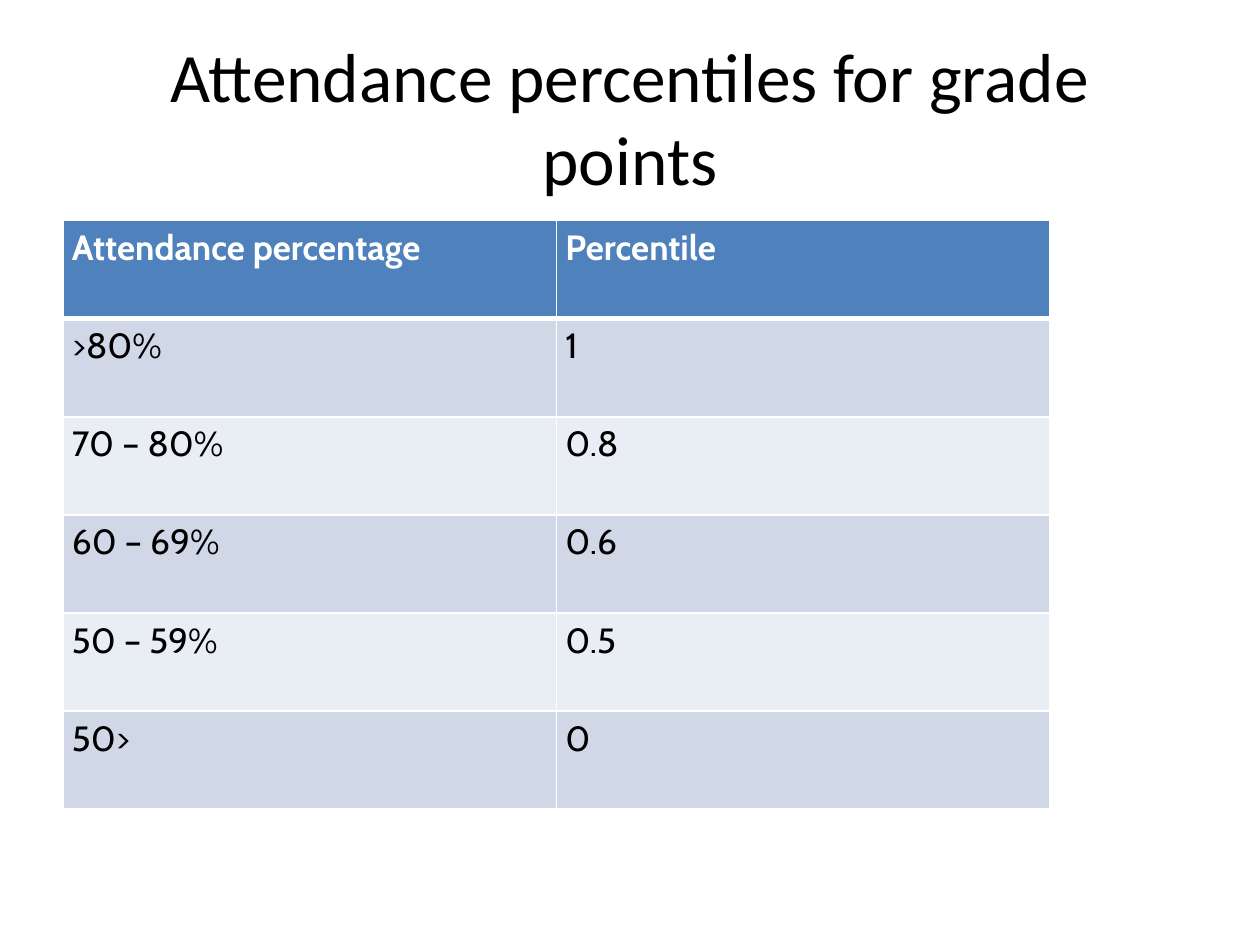
from dataclasses import dataclass

from lxml import etree
from pptx import Presentation
from pptx import util as u
from pptx.dml import color
from pptx.enum import text
from pptx.oxml import ns


@dataclass(frozen=True)
class Theme:
    """Colours, fonts and type sizes of the slide."""
    ink: str = "000000"
    paper: str = "FFFFFF"
    header: str = "4F81BD"
    bands: tuple = ("D0D8E8", "E9EDF4")
    title_font: str = "Calibri"
    table_font: str = "Cabin"
    title_size: float = 39.6
    table_size: float = 20


THEME = Theme()
TITLE = "Attendance percentiles for grade points"
GRADES = [
    ("Attendance percentage", "Percentile"),
    (">80%", "1"),
    ("70 – 80%", "0.8"),
    ("60 – 69%", "0.6"),
    ("50 – 59%", "0.5"),
    ("50>", "0"),
]


def style_text(p, font, size, rgb, bold=False):
    """Format every run of a paragraph."""
    for r in p.runs:
        r.font.name = font
        r.font.size = u.Pt(size)
        r.font.bold = bold
        r.font.color.rgb = color.RGBColor.from_string(rgb)


def set_title(s):
    """Place and format the title placeholder."""
    sp = s.shapes.title
    sp.left, sp.top, sp.width, sp.height = u.Cm(1.27), u.Cm(0.76), u.Cm(22.86), u.Cm(3.18)
    tf = sp.text_frame
    tf.text = TITLE
    tf.word_wrap = True
    tf.auto_size = text.MSO_AUTO_SIZE.NONE
    tf.vertical_anchor = text.MSO_ANCHOR.MIDDLE
    p = tf.paragraphs[0]
    p.alignment = text.PP_ALIGN.CENTER
    style_text(p, THEME.title_font, THEME.title_size, THEME.ink)


def set_borders(cell, top, bottom):
    """Draw the four cell borders, with top and bottom widths in points."""
    tc_pr = cell._tc.get_or_add_tcPr()
    for side, width in (("L", 1), ("R", 1), ("T", top), ("B", bottom)):
        ln = etree.SubElement(tc_pr, ns.qn(f"a:ln{side}"), w=str(u.Pt(width)))
        fill = etree.SubElement(ln, ns.qn("a:solidFill"))
        etree.SubElement(fill, ns.qn("a:srgbClr"), val=THEME.paper)


def fill_cell(cell, value, row):
    """Write and format one cell according to its row."""
    header = row == 0
    set_borders(cell, 3 if row == 1 else 1, 3 if header else 1)
    cell.fill.solid()
    cell.fill.fore_color.rgb = color.RGBColor.from_string(
        THEME.header if header else THEME.bands[(row - 1) % 2])
    cell.margin_left = cell.margin_right = u.Cm(0.18)
    cell.margin_top = cell.margin_bottom = 0
    cell.text = value
    p = cell.text_frame.paragraphs[0]
    p.line_spacing = 1.15
    style_text(p, THEME.table_font, THEME.table_size,
               THEME.paper if header else THEME.ink, header)


def add_grade_table(s):
    """Add the table of attendance bands and percentiles."""
    tbl = s.shapes.add_table(len(GRADES), len(GRADES[0]), u.Cm(1.27), u.Cm(4.45),
                             u.Cm(19.9), u.Cm(11.86)).table
    for i, values in enumerate(GRADES):
        for j, value in enumerate(values):
            fill_cell(tbl.cell(i, j), value, i)


def main():
    """Build and save the slide."""
    prs = Presentation()
    prs.slide_width, prs.slide_height = u.Cm(25.4), u.Cm(19.05)
    s = prs.slides.add_slide(prs.slide_layouts[5])
    set_title(s)
    add_grade_table(s)
    prs.save("out.pptx")


if __name__ == "__main__":
    main()
